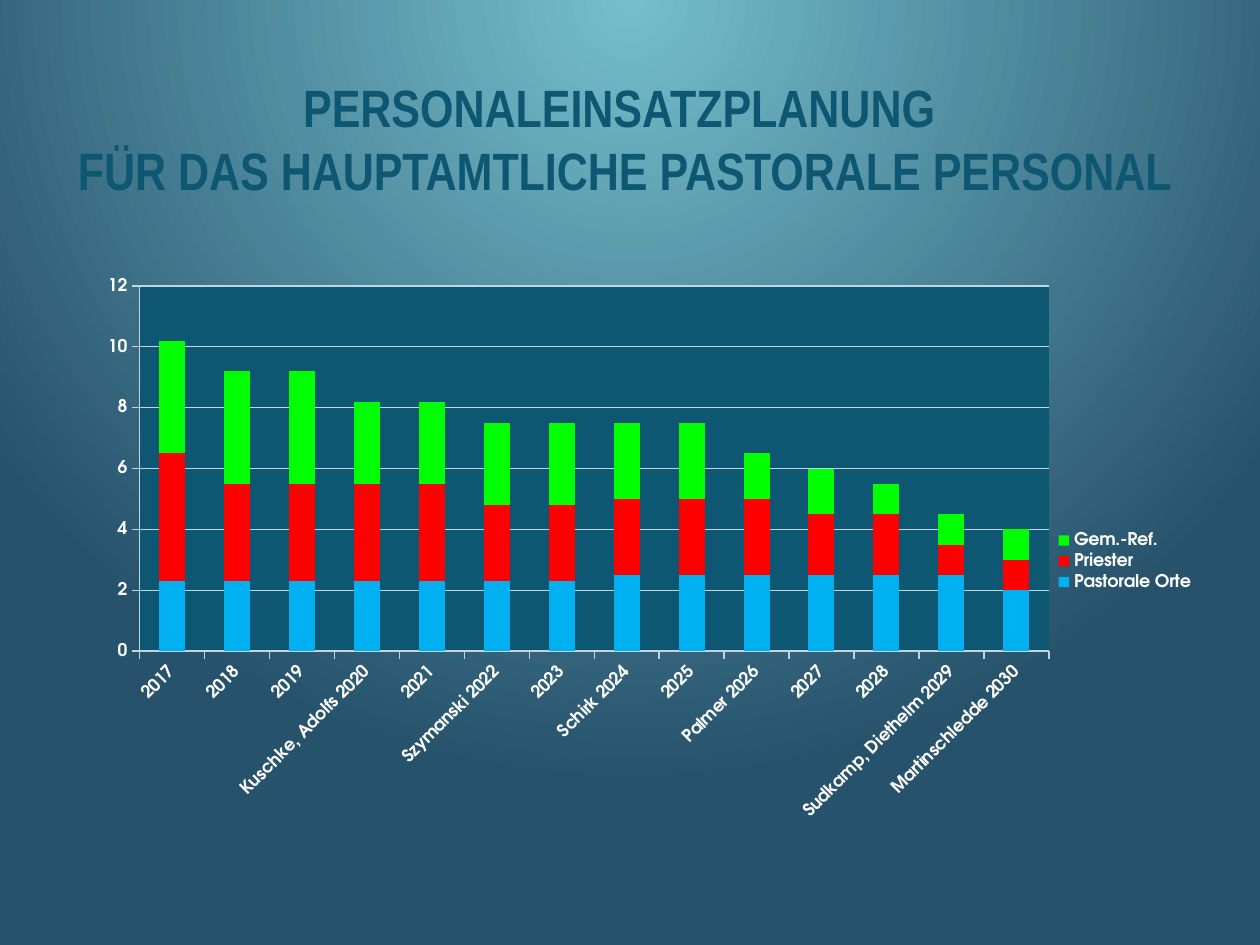
from lxml.etree import SubElement
from pptx import Presentation
from pptx.chart.data import CategoryChartData
from pptx.dml.color import RGBColor
from pptx.enum.chart import XL_CHART_TYPE, XL_LEGEND_POSITION, XL_TICK_MARK
from pptx.enum.text import MSO_ANCHOR, PP_ALIGN
from pptx.oxml.ns import qn
from pptx.util import Inches, Pt

COLORS = {
    "glow": "75BECB",
    "edge": "27526C",
    "petrol": "0E5772",
    "white": "FFFFFF",
    "grid": "C3D5DC",
    "blue": "00B0F0",
    "red": "FF0000",
    "green": "00FF00",
}
TITLE = "PERSONALEINSATZPLANUNG \vFÜR DAS HAUPTAMTLICHE PASTORALE PERSONAL"
YEARS = [
    "2017", "2018", "2019", "Kuschke, Adolfs 2020", "2021", "Szymanski 2022",
    "2023", "Schirk 2024", "2025", "Palmer 2026", "2027", "2028",
    "Sudkamp, Diethelm 2029", "Martinschledde 2030",
]
STAFF = [
    ("Pastorale Orte", "blue", [2.3] * 7 + [2.5] * 6 + [2]),
    ("Priester", "red", [4.2] + [3.2] * 4 + [2.5] * 5 + [2, 2, 1, 1]),
    ("Gem.-Ref.", "green", [3.7] * 3 + [2.7] * 4 + [2.5] * 2 + [1.5] * 2 + [1] * 3),
]


def rgb(name):
    """Return the named palette colour."""
    return RGBColor.from_string(COLORS[name])


def format_font(font, *, name, size, color, bold=True):
    """Set the typeface, size, colour and weight of a font."""
    font.name = name
    font.size = Pt(size)
    font.bold = bold
    font.color.rgb = rgb(color)


def paint_background(page):
    """Fill the page with a circular gradient that glows from the top centre."""
    fill = page.background.fill
    fill.gradient()
    for stop, color in zip(fill.gradient_stops, ("glow", "edge")):
        stop.color.rgb = rgb(color)
    linear = next(page.background._cSld.iter(qn("a:lin")))
    gradient = linear.getparent()
    gradient.remove(linear)
    circle = SubElement(gradient, qn("a:path"), {"path": "circle"})
    SubElement(circle, qn("a:fillToRect"), {"b": "100000"})


def add_text(page, text, left, top, width, height, **style):
    """Add a centred, wrapped text box."""
    box = page.shapes.add_textbox(Inches(left), Inches(top), Inches(width), Inches(height))
    frame = box.text_frame
    frame.word_wrap = True
    frame.vertical_anchor = MSO_ANCHOR.MIDDLE
    para = frame.paragraphs[0]
    para.text = text
    para.alignment = PP_ALIGN.CENTER
    for span in para.runs:
        format_font(span.font, **style)


def format_axis(axis):
    """Give an axis a thin light line and outside ticks."""
    axis.major_tick_mark = XL_TICK_MARK.OUTSIDE
    axis.minor_tick_mark = XL_TICK_MARK.NONE
    axis.format.line.color.rgb = rgb("grid")
    axis.format.line.width = Pt(0.75)


def format_plot_area(chart, left, top, width, height):
    """Fix the inner plot area as fractions of the chart and fill it."""
    area = chart._chartSpace.chart.plotArea
    for old in area.findall(qn("c:layout")):
        area.remove(old)
    layout = SubElement(area, qn("c:layout"))
    area.insert(0, layout)
    manual = SubElement(layout, qn("c:manualLayout"))
    settings = {
        "layoutTarget": "inner", "xMode": "edge", "yMode": "edge",
        "x": left, "y": top, "w": width, "h": height,
    }
    for tag, value in settings.items():
        SubElement(manual, qn(f"c:{tag}"), {"val": str(value)})
    shape = SubElement(area, qn("c:spPr"))
    fill = SubElement(shape, qn("a:solidFill"))
    SubElement(fill, qn("a:srgbClr"), {"val": COLORS["petrol"]})


def add_staff_chart(page, left, top, width, height):
    """Add the stacked columns of staff per year."""
    data = CategoryChartData()
    data.categories = YEARS
    for name, _, values in STAFF:
        data.add_series(name, values)
    chart = page.shapes.add_chart(
        XL_CHART_TYPE.COLUMN_STACKED,
        Inches(left), Inches(top), Inches(width), Inches(height), data,
    ).chart
    label_style = {"name": "TeX Gyre Adventor", "size": 10, "color": "white"}
    format_font(chart.font, **label_style)
    chart.has_title = False
    chart.has_legend = True
    chart.legend.position = XL_LEGEND_POSITION.RIGHT
    chart.legend.include_in_layout = False

    plot = chart.plots[0]
    plot.gap_width = 150
    plot.overlap = 100
    plot.vary_by_categories = False
    for series, (_, color, _) in zip(plot.series, STAFF):
        series.format.fill.solid()
        series.format.fill.fore_color.rgb = rgb(color)

    years, counts = chart.category_axis, chart.value_axis
    for axis in (years, counts):
        format_axis(axis)
        format_font(axis.tick_labels.font, **label_style)
    next(years._element.iter(qn("a:bodyPr"))).set("rot", "-2700000")
    counts.minimum_scale, counts.maximum_scale, counts.major_unit = 0, 12, 2
    counts.has_major_gridlines = True
    counts.major_gridlines.format.line.color.rgb = rgb("grid")
    counts.major_gridlines.format.line.width = Pt(0.75)
    format_plot_area(chart, 0.048, 0.044, 0.811, 0.605)


def main():
    """Build and save the staffing slide."""
    deck = Presentation()
    deck.slide_width, deck.slide_height = Inches(10), Inches(7.5)
    page = deck.slides.add_slide(deck.slide_layouts[6])
    paint_background(page)
    add_text(page, TITLE, 0.35, 0.4, 9.23, 1.39,
             name="Arial Narrow", size=30, color="petrol")
    add_staff_chart(page, 0.68, 2.06, 8.9, 4.79)
    deck.save("out.pptx")


if __name__ == "__main__":
    main()
